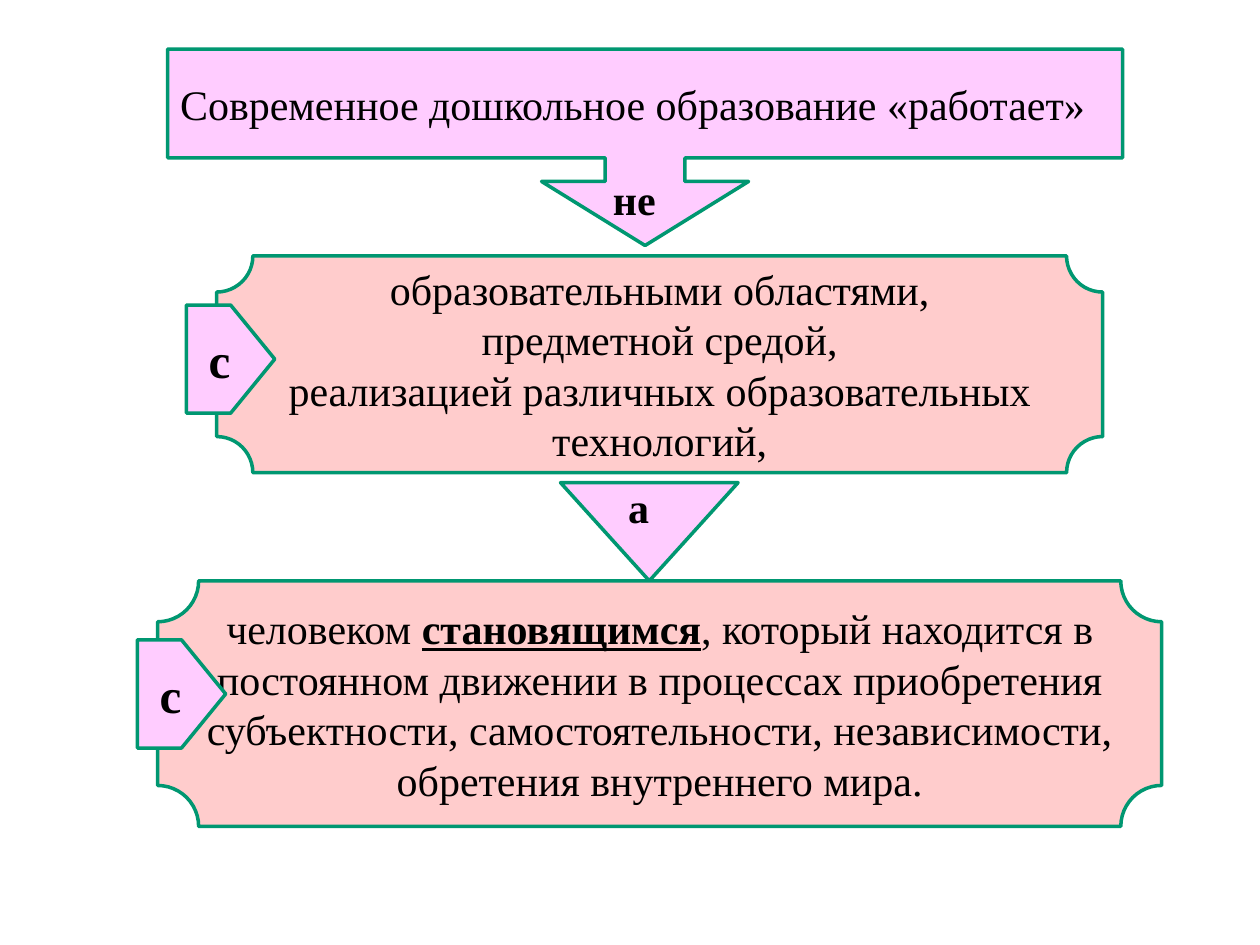
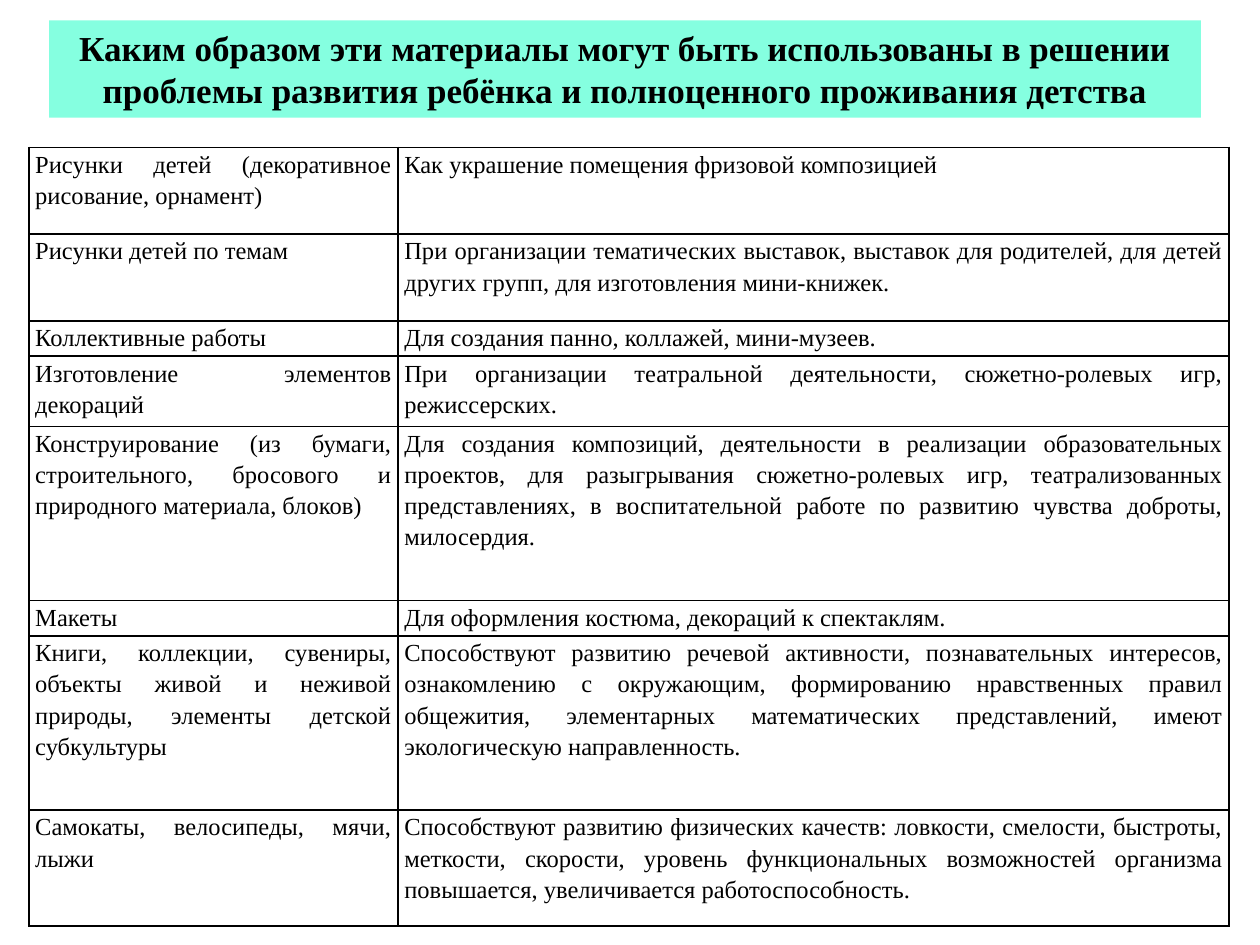
from lxml import etree
from pptx import Presentation
from pptx.dml.color import RGBColor
from pptx.enum.shapes import MSO_SHAPE
from pptx.enum.text import MSO_ANCHOR, MSO_AUTO_SIZE, PP_ALIGN
from pptx.oxml.ns import qn
from pptx.util import Cm, Pt

# Shared look
BLACK = RGBColor(0x00, 0x00, 0x00)
GREEN = RGBColor(0x00, 0x97, 0x71)
PINK = RGBColor(0xFF, 0xCC, 0xCC)
LILAC = RGBColor(0xFF, 0xCC, 0xFF)
MINT = RGBColor(0x85, 0xFF, 0xE0)
FONT = "Times New Roman"

PLAQUE = MSO_SHAPE.PLAQUE
PENTAGON = MSO_SHAPE.PENTAGON
CALLOUT = MSO_SHAPE.DOWN_ARROW_CALLOUT
MERGE = MSO_SHAPE.FLOWCHART_MERGE
LEFT, CENTER, JUSTIFY = PP_ALIGN.LEFT, PP_ALIGN.CENTER, PP_ALIGN.JUSTIFY
TOP, MIDDLE = MSO_ANCHOR.TOP, MSO_ANCHOR.MIDDLE

# Moves a centred connecting word slightly left of the arrow's axis
WORD_INSET = 0.68

TITLE_ONLY, BLANK = 5, 6

AREAS = [
    [("образовательными областями,", {})],
    [("предметной средой,", {})],
    [("реализацией различных образовательных технологий,", {})],
]
PERSON = [[
    ("человеком ", {}),
    ("становящимся", {"bold": True, "underline": True}),
    (", который находится в постоянном движении в процессах приобретения "
     "субъектности, самостоятельности, независимости, обретения внутреннего мира.", {}),
]]

QUESTION = ("Каким образом эти материалы могут быть использованы в решении "
            "проблемы развития ребёнка и полноценного проживания детства")
COLUMN_WIDTHS = (7.44, 16.76)
# Row height, material, use
MATERIALS = [
    (1.75, "Рисунки детей (декоративное рисование, орнамент)",
     "Как украшение помещения фризовой композицией"),
    (1.75, "Рисунки детей по темам",
     "При организации тематических выставок, выставок для родителей, "
     "для детей других групп, для изготовления мини-книжек."),
    (0.71, "Коллективные работы",
     "Для создания панно, коллажей, мини-музеев."),
    (1.42, "Изготовление элементов декораций",
     "При организации театральной деятельности, сюжетно-ролевых игр, режиссерских."),
    (3.51, "Конструирование (из бумаги, строительного, бросового и "
     "природного материала, блоков)",
     "Для создания композиций, деятельности в реализации образовательных проектов, "
     "для разыгрывания сюжетно-ролевых игр, театрализованных представлениях, "
     "в воспитательной работе по развитию чувства доброты, милосердия."),
    (0.71, "Макеты",
     "Для оформления костюма, декораций к спектаклям."),
    (3.51, "Книги, коллекции, сувениры, объекты живой и неживой природы, "
     "элементы детской субкультуры",
     "Способствуют развитию речевой активности, познавательных интересов, "
     "ознакомлению с окружающим, формированию нравственных правил общежития, "
     "элементарных математических представлений, имеют экологическую направленность."),
    (2.34, "Самокаты, велосипеды, мячи, лыжи",
     "Способствуют развитию физических качеств: ловкости, смелости, быстроты, "
     "меткости, скорости, уровень функциональных возможностей организма повышается, "
     "увеличивается работоспособность."),
]


def set_all(target, values):
    for name, value in values.items():
        setattr(target, name, value)


def write(frame, paragraphs, size=24, align=CENTER, spacing=None, **style):
    """Fill a text frame with paragraphs, each a list of (text, format) spans."""
    for index, spans in enumerate(paragraphs):
        para = frame.paragraphs[0] if index == 0 else frame.add_paragraph()
        para.alignment = align
        if spacing:
            para.line_spacing = spacing
        for text, extra in spans:
            span = para.add_run()
            span.text = text
            set_all(span.font, {"name": FONT, "size": Pt(size), **style, **extra})
            span.font.color.rgb = BLACK


def add_outlined(page, kind, box, fill):
    shape = page.shapes.add_shape(kind, *map(Cm, box))
    shape.shadow.inherit = False
    shape.fill.solid()
    shape.fill.fore_color.rgb = fill
    shape.line.color.rgb = GREEN
    shape.line.width = Pt(2)
    set_all(shape.text_frame, {"word_wrap": True, "vertical_anchor": MIDDLE})
    return shape


# Slide 1: headline arrow, connecting words and plaques
def add_headline(page, box):
    left, top, width, height = box
    callout = add_outlined(page, CALLOUT, box, LILAC)
    for index, value in enumerate((0.406, 0.527, 0.326, 0.554)):
        callout.adjustments[index] = value
    write(callout.text_frame,
          [[("Современное дошкольное образование «работает»", {})]], align=LEFT)

    word_width = 2.4
    word = page.shapes.add_textbox(Cm(left + (width - word_width) / 2),
                                   Cm(top + 2.39), Cm(word_width), Cm(1.27))
    set_all(word.text_frame, {"word_wrap": True, "margin_right": Cm(WORD_INSET)})
    write(word.text_frame, [[("не", {})]], bold=True)


def add_contrast(page, box):
    triangle = add_outlined(page, MERGE, box, LILAC)
    triangle.text_frame.margin_right = Cm(WORD_INSET)
    write(triangle.text_frame, [[("а", {})]], bold=True)


def add_plaque(page, box, paragraphs):
    plaque = add_outlined(page, PLAQUE, box, PINK)
    write(plaque.text_frame, paragraphs)


def add_tag(page, plaque_box, offset_x, offset_y):
    left, top = plaque_box[:2]
    tag = add_outlined(page, PENTAGON,
                       (left + offset_x, top + offset_y, 1.78, 2.18), LILAC)
    write(tag.text_frame, [[("с", {})]], size=28, bold=True)


def build_scheme(deck):
    page = deck.slides.add_slide(deck.slide_layouts[BLANK])
    areas_box = (4.37, 5.16, 17.86, 4.37)
    person_box = (3.18, 11.71, 20.24, 4.95)
    add_plaque(page, areas_box, AREAS)
    add_headline(page, (3.38, 0.99, 19.25, 3.96))
    add_contrast(page, (11.3, 9.73, 3.58, 1.98))
    add_plaque(page, person_box, PERSON)
    add_tag(page, areas_box, -0.61, 0.99)
    add_tag(page, person_box, -0.41, 1.19)


# Slide 2: question and table of materials
def add_question(page, box):
    title = page.shapes.title
    set_all(title, dict(zip(("left", "top", "width", "height"), map(Cm, box))))
    title.fill.solid()
    title.fill.fore_color.rgb = MINT
    set_all(title.text_frame, {"word_wrap": True, "vertical_anchor": TOP,
                               "auto_size": MSO_AUTO_SIZE.NONE})
    write(title.text_frame, [[(QUESTION, {})]], size=20, bold=True)


def add_borders(cell):
    properties = cell._tc.get_or_add_tcPr()
    for side in ("a:lnL", "a:lnR", "a:lnT", "a:lnB"):
        line = etree.SubElement(properties, qn(side), w=str(Pt(1)))
        fill = etree.SubElement(line, qn("a:solidFill"))
        etree.SubElement(fill, qn("a:srgbClr"), val=str(BLACK))


def add_materials(page, left, top):
    heights = [row[0] for row in MATERIALS]
    table = page.shapes.add_table(len(MATERIALS), len(COLUMN_WIDTHS),
                                  Cm(left), Cm(top), Cm(sum(COLUMN_WIDTHS)),
                                  Cm(sum(heights))).table
    set_all(table, {"first_row": False, "horz_banding": False})
    for column, width in zip(table.columns, COLUMN_WIDTHS):
        column.width = Cm(width)
    for row, (height, *texts) in zip(table.rows, MATERIALS):
        row.height = Cm(height)
        for cell, text in zip(row.cells, texts):
            set_all(cell, {"margin_left": Cm(0.13), "margin_right": Cm(0.13),
                           "margin_top": 0, "margin_bottom": 0})
            add_borders(cell)
            cell.fill.background()
            write(cell.text_frame, [[(text, {})]], size=14, align=JUSTIFY, spacing=1.15)


def build_materials(deck):
    page = deck.slides.add_slide(deck.slide_layouts[TITLE_ONLY])
    add_question(page, (0.99, 0.41, 23.22, 1.96))
    add_materials(page, 0.58, 2.97)


def main():
    deck = Presentation()
    set_all(deck, {"slide_width": Cm(25.4), "slide_height": Cm(19.05)})
    build_scheme(deck)
    build_materials(deck)
    deck.save("out.pptx")


if __name__ == "__main__":
    main()
